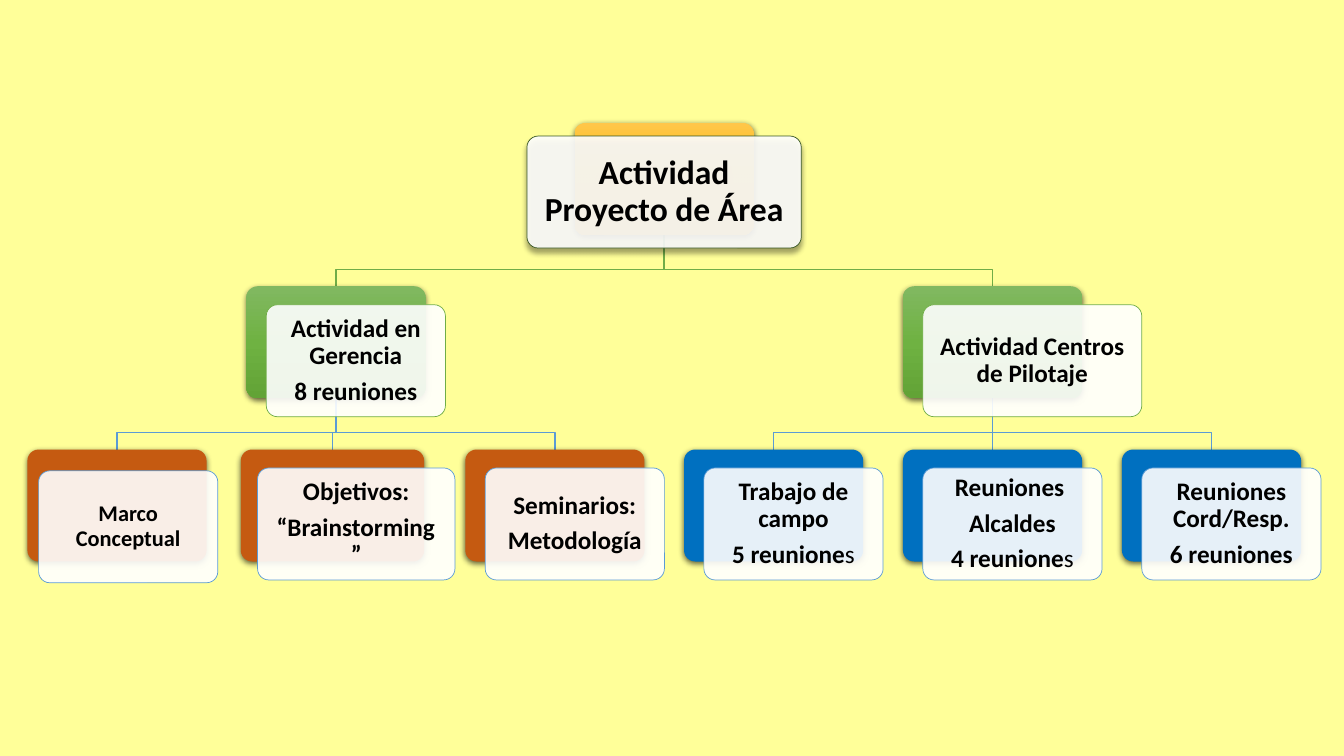
from pptx import Presentation
from pptx.dml.color import RGBColor
from pptx.enum.shapes import MSO_CONNECTOR as LINE, MSO_SHAPE as SHAPE
from pptx.enum.text import MSO_ANCHOR as ANCHOR, PP_ALIGN as ALIGN
from pptx.oxml import parse_xml
from pptx.oxml.ns import nsdecls
from lxml.etree import SubElement

YELLOW = RGBColor(0xFF, 0xFF, 0x99)
WHITE = RGBColor(0xFF, 0xFF, 0xFF)
BLACK = RGBColor(0x00, 0x00, 0x00)
DARK_GREEN = RGBColor(0x38, 0x57, 0x23)
GREEN = RGBColor(0x70, 0xAD, 0x47)
LIGHT_BLUE = RGBColor(0x5B, 0x9B, 0xD5)
RUST = RGBColor(0xC5, 0x5A, 0x11)
BLUE = RGBColor(0x00, 0x70, 0xC0)
GOLD_FADE = [RGBColor(0xFF, 0xC6, 0x4B), RGBColor(0xFF, 0xC0, 0x00), RGBColor(0xE3, 0xAB, 0x00)]
GREEN_FADE = [RGBColor(0x81, 0xB8, 0x61), RGBColor(0x6F, 0xB2, 0x42), RGBColor(0x62, 0xA3, 0x36)]

BOX_W, BOX_H = 128, 80
CARD_DX, CARD_DY = 14.2, 13.2
BEND = 12  # height of a branch's crossbar above the child


def add_shadow(s, alpha, blur, dist):
    s.shadow.inherit = False
    effects = s._element.spPr.find("{*}effectLst")
    effects.append(parse_xml(
        f'<a:outerShdw {nsdecls("a")} blurRad="{Pt(blur)}" dist="{Pt(dist)}" dir="5400000" '
        f'algn="ctr" rotWithShape="0"><a:srgbClr val="000000">'
        f'<a:alpha val="{alpha * 1000}"/></a:srgbClr></a:outerShdw>'))


def fill_fade(s, colors):
    stops = "".join(f'<a:gs pos="{i * 50000}"><a:srgbClr val="{c}"/></a:gs>'
                    for i, c in enumerate(colors))
    s._element.spPr.find("{*}prstGeom").addnext(parse_xml(
        f'<a:gradFill {nsdecls("a")} rotWithShape="1"><a:gsLst>{stops}</a:gsLst>'
        f'<a:lin ang="5400000" scaled="0"/></a:gradFill>'))


def add_text(s, paragraphs, size=18, inset=8, after=6):
    """Write bold centred paragraphs; what follows a bar is not bold."""
    tf = s.text_frame
    tf.word_wrap = True
    tf.vertical_anchor = ANCHOR.MIDDLE
    tf.margin_left = tf.margin_right = tf.margin_top = tf.margin_bottom = Pt(inset)
    for i, text in enumerate(paragraphs):
        p = tf.paragraphs[0] if i == 0 else tf.add_paragraph()
        p.alignment = ALIGN.CENTER
        p.line_spacing = 0.9
        p.space_after = Pt(after)
        for j, part in enumerate(text.split("|")):
            r = p.add_run()
            r.text = part
            r.font.name, r.font.size = "Calibri", Pt(size)
            r.font.bold = j == 0
            r.font.color.rgb = BLACK


def add_box(slide, x, y, w):
    s = slide.shapes.add_shape(SHAPE.ROUNDED_RECTANGLE, Pt(x), Pt(y), Pt(w), Pt(BOX_H))
    s.adjustments[0] = 0.1
    s.shadow.inherit = False
    return s


def add_node(slide, x, y, paragraphs, fill, line, w=BOX_W, card_w=BOX_W,
             dx=CARD_DX, dy=CARD_DY, raised=False, **text_format):
    """Place a coloured box with a white text card over it; return the box."""
    back = add_box(slide, x, y, w)
    if isinstance(fill, list):
        fill_fade(back, fill)
    else:
        back.fill.solid()
        back.fill.fore_color.rgb = fill
    back.line.fill.background()
    add_shadow(back, 63, 4.5, 1.5)

    card = add_box(slide, x + dx, y + dy, card_w)
    card.fill.solid()
    card.fill.fore_color.rgb = WHITE
    color = card._element.spPr.find("{*}solidFill")[0]
    SubElement(color, color.tag.replace("srgbClr", "alpha"), val="90000")
    card.line.color.rgb, card.line.width = line, Pt(0.5)
    if raised:
        add_shadow(card, 40, 4, 3)
    add_text(card, paragraphs, **text_format)
    return back


def add_branch(slide, parent, child, color):
    """Join a parent to its child, behind all the boxes."""
    x1, y1 = parent.left + parent.width // 2, parent.top + parent.height
    x2, y2 = child.left + child.width // 2, child.top
    if x1 == x2:
        s = slide.shapes.add_connector(LINE.STRAIGHT, x1, y1, x2, y2)
        s.begin_connect(parent, 2)
        s.end_connect(child, 0)
        SubElement(s._element.spPr, "{http://schemas.openxmlformats.org/drawingml/2006/main}effectLst")
    else:
        bend = y2 - Pt(BEND)
        path = slide.shapes.build_freeform(x1, y1)
        path.add_line_segments([(x1, bend), (x2, bend), (x2, y2)], close=False)
        s = path.convert_to_shape()
        s.fill.background()
        s.shadow.inherit = False
    s.line.color.rgb, s.line.width = color, Pt(1)
    slide.shapes._spTree.insert(2, s._element)


def add_area(slide, root, x, y, paragraphs, card_w, fill, children):
    """Place a second-level node with its row of children below."""
    area = add_node(slide, x, y, paragraphs, GREEN_FADE, GREEN, card_w=card_w)
    add_branch(slide, root, area, GREEN)
    for child_x, lines, options in children:
        child = add_node(slide, child_x, y + 116.6, lines, fill, LIGHT_BLUE, **options)
        add_branch(slide, area, child, LIGHT_BLUE)


def add_chart_tree(slide):
    root = add_node(slide, 410.4, 87.8, ["Actividad Proyecto de Área"], GOLD_FADE, DARK_GREEN,
                    card_w=196, dx=-34, dy=9.4, raised=True, size=24, inset=9.4)
    # Management area
    add_area(slide, root, 176, 204.5, ["Actividad en Gerencia", "8 reuniones"], BOX_W, RUST, [
        (19.6, ["Marco Conceptual"], dict(dx=8, dy=15.2, size=16)),
        (172, ["Objetivos:", "“Brainstorming”"], dict(w=131, card_w=141, dx=12)),
        (332.4, ["Seminarios:", "Metodología"], {}),
    ])
    # Pilot centres: children one pitch apart, the middle one under the area
    x, pitch = 645, 156.4
    add_area(slide, root, x, 204.5, ["Actividad Centros de Pilotaje"], 156.4, BLUE, [
        (x - pitch, ["Trabajo de campo", "5 reunione|s"], {}),
        (x, ["Reuniones ", "Alcaldes", "4 reunione|s"], {}),
        (x + pitch, ["Reuniones Cord/Resp.", "6 reuniones"], {}),
    ])


def main():
    prs = Presentation()
    prs.slide_width, prs.slide_height = Pt(960), Pt(540)
    slide = prs.slides.add_slide(prs.slide_layouts[6])
    slide.background.fill.solid()
    slide.background.fill.fore_color.rgb = YELLOW
    add_chart_tree(slide)
    prs.save("out.pptx")


from pptx.util import Pt

if __name__ == "__main__":
    main()
